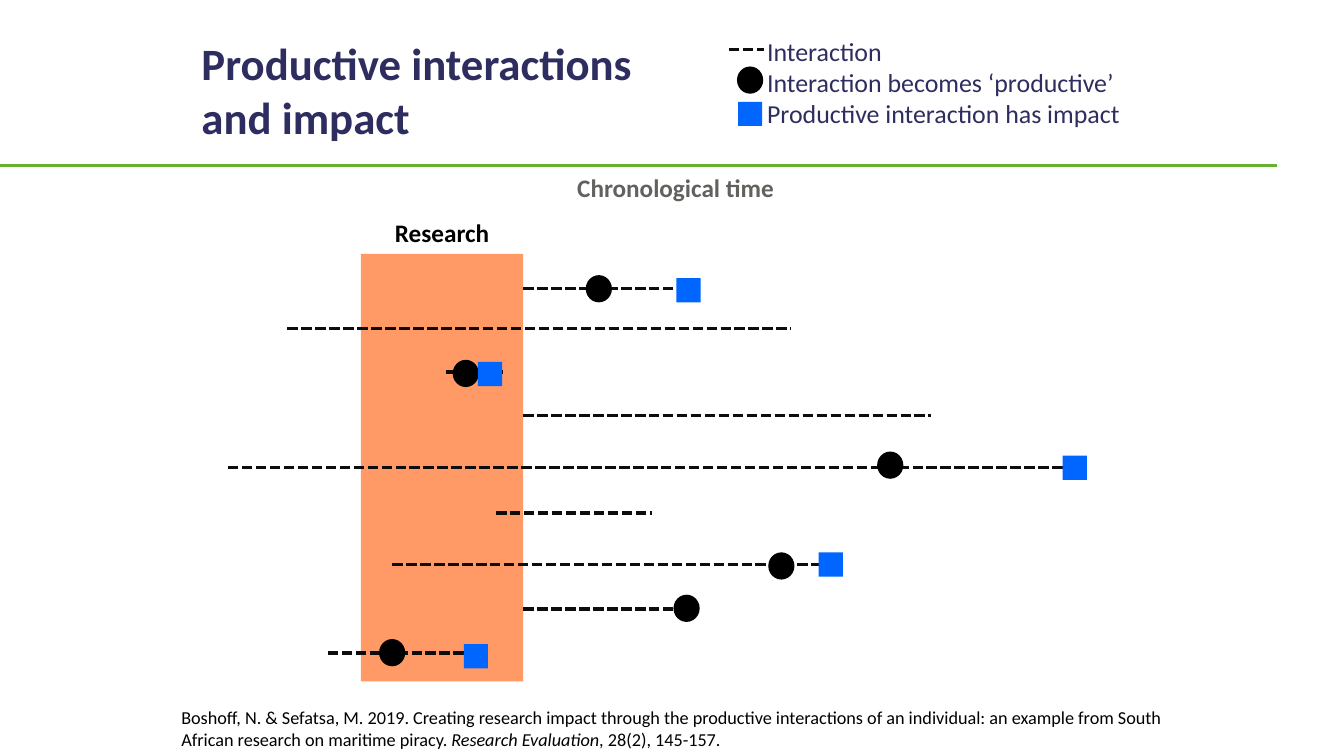
import pptx
import pptx.util
import pptx.dml.color
import pptx.enum.dml
import pptx.enum.shapes
import pptx.enum.text
import pptx.oxml.ns
import lxml.etree

SCALE = 9144
HUES = {"navy": "2E2D60", "green": "68B133", "gray": "60625E", "black": "000000",
        "ink": "0D0D0D", "blue": "0066FF", "orange": "FF9966"}
KINDS = pptx.enum.shapes.MSO_SHAPE
TOP = pptx.enum.text.MSO_ANCHOR.TOP
BASE = pptx.enum.text.MSO_ANCHOR.BOTTOM
LEFT = pptx.enum.text.PP_ALIGN.LEFT
MID = pptx.enum.text.PP_ALIGN.CENTER

# start, end, line y, dot (left, top), box (left, top)
ROWS = [
    (519, 673, 286, (581, 273), (671, 276)),
    (285, 784, 326, None, None),
    (442, 498, 369, (449, 357), (474, 359)),
    (519, 923, 412, None, None),
    (226, 1054, 464, (870, 448), (1054, 452)),
    (492, 647, 509, None, None),
    (389, 812, 560, (762, 548), (812, 548)),
    (519, 673, 604, (668, 590), None),
    (325, 460, 648, (376, 634), (460, 639)),
]
CITE = [
    ("Boshoff, N. & Sefatsa, M. 2019. Creating research impact through the productive "
     "interactions of an individual: an example from South African research on maritime "
     "piracy. ", False),
    ("Research Evaluation", True),
    (", 28(2), 145-157.", False),
]


def px(num):
    """Turn px into EMU."""
    return pptx.util.Emu(num * SCALE)


def hue(name):
    """Look up a named colour."""
    return pptx.dml.color.RGBColor.from_string(HUES[name])


def text(slide, area, paras, size, tint, bold=False, anchor=TOP, align=LEFT):
    """Add a text box whose paragraphs are lists of (words, italic) runs."""
    frame = slide.shapes.add_textbox(*map(px, area)).text_frame
    for key, value in {"word_wrap": True, "vertical_anchor": anchor}.items():
        setattr(frame, key, value)
    for rank, runs in enumerate(paras):
        para = frame.add_paragraph() if rank else frame.paragraphs[0]
        para.alignment = align
        for words, slant in runs:
            run = para.add_run()
            run.text = words
            look = {"name": "Calibri", "size": pptx.util.Pt(size),
                    "bold": bold, "italic": slant}
            for key, value in look.items():
                setattr(run.font, key, value)
            run.font.color.rgb = hue(tint)


def block(slide, kind, area, tint):
    """Add a plain filled shape."""
    shape = slide.shapes.add_shape(kind, *map(px, area))
    shape.shadow.inherit = False
    shape.fill.solid()
    shape.fill.fore_color.rgb = hue(tint)
    shape.line.fill.background()
    return shape


def dot(slide, left, top):
    """Add the mark of a productive interaction."""
    return block(slide, KINDS.OVAL, (left, top, 26, 27), "black")


def box(slide, left, top):
    """Add the mark of impact."""
    return block(slide, KINDS.RECTANGLE, (left, top, 24, 24), "blue")


def rule(slide, start, end, y, tint, width, dash=None):
    """Add a level line."""
    kind = pptx.enum.shapes.MSO_CONNECTOR.STRAIGHT
    line = slide.shapes.add_connector(kind, px(start), px(y), px(end), px(y))
    line.line.color.rgb = hue(tint)
    for key, value in {"width": pptx.util.Pt(width), "dash_style": dash}.items():
        setattr(line.line, key, value)
    lxml.etree.SubElement(line._element.spPr, pptx.oxml.ns.qn("a:effectLst"))
    return line


def dashed(slide, start, end, y):
    """Add the line of an interaction."""
    dash = pptx.enum.dml.MSO_LINE.SQUARE_DOT
    line = rule(slide, start, end, y, "ink", 2.5, dash)
    return line


def track(slide, start, end, y, spot, goal):
    """Add one interaction with its marks."""
    line = dashed(slide, start, end, y)
    if spot:
        dot(slide, *spot)
    if goal:
        mark = box(slide, *goal)
        if goal == (end, y - 12):
            line.end_connect(mark, 1)


def legend(slide):
    """Add the key to the marks."""
    words = ["Interaction",
             "Interaction becomes ‘productive’",
             "Productive interaction has impact"]
    text(slide, (751, 8, 415, 125), [[(word, False)] for word in words],
         18.5, "navy", anchor=BASE)
    dashed(slide, 723, 758, 49)
    dot(slide, 731, 66)
    box(slide, 732, 101)


def main():
    """Build and save the slide."""
    deck = pptx.Presentation()
    for key, value in {"slide_width": 1333, "slide_height": 750}.items():
        setattr(deck, key, px(value))
    slide = deck.slides.add_slide(deck.slide_layouts[6])
    rule(slide, 0, 1267, 164, "green", 2)
    text(slide, (190, 22, 506, 125), [[("Productive interactions and impact", False)]],
         32, "navy", True, BASE)
    legend(slide)
    block(slide, KINDS.RECTANGLE, (358, 252, 161, 424), "orange")
    text(slide, (544, 166, 252, 40), [[("Chronological time", False)]],
         18, "gray", True, align=MID)
    text(slide, (358, 211, 161, 40), [[("Research", False)]],
         18, "black", True, align=MID)
    for row in ROWS:
        track(slide, *row)
    text(slide, (170, 696, 996, 54), [CITE], 13, "black")
    deck.save("out.pptx")


if __name__ == "__main__":
    main()
